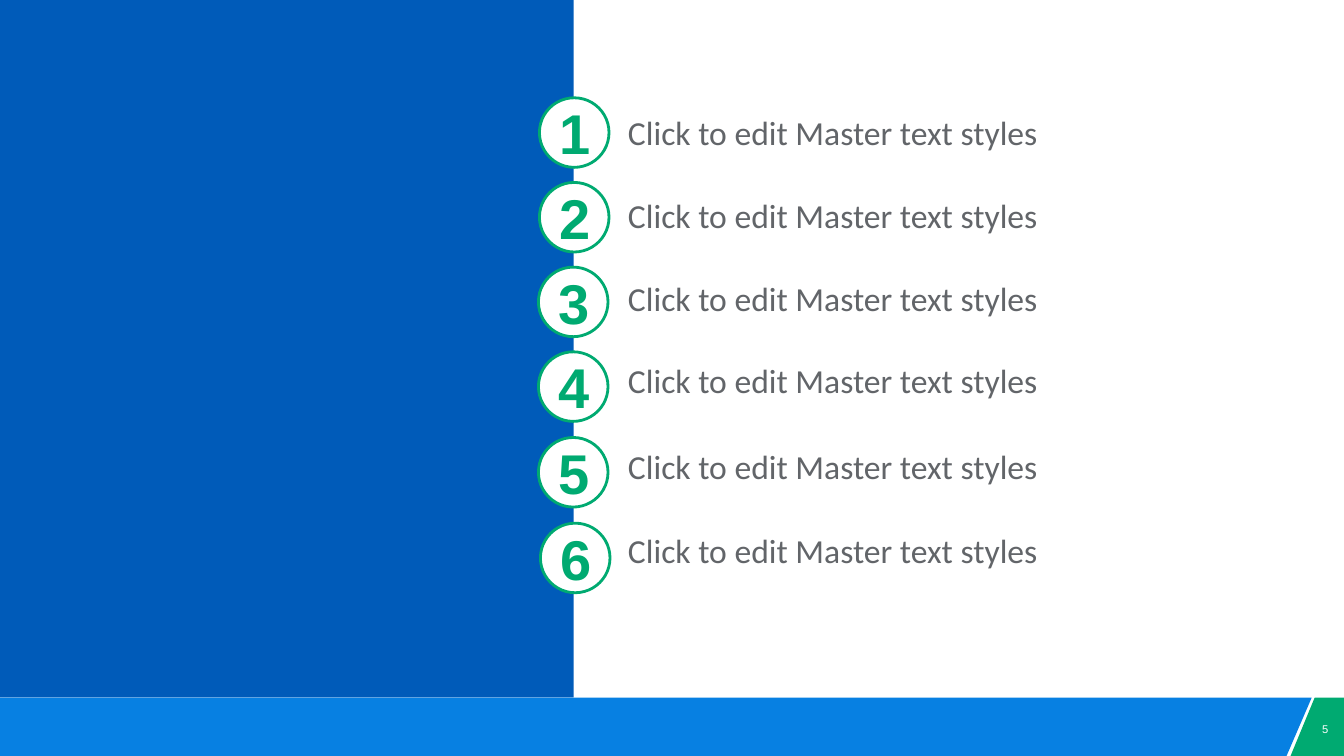
"""Build an agenda slide with six numbered lines beside a blue panel."""
from dataclasses import dataclass

from pptx import Presentation
from pptx.dml.color import RGBColor as Rgb
from pptx.enum.shapes import MSO_SHAPE as Kind
from pptx.enum.text import MSO_ANCHOR as Anchor, MSO_AUTO_SIZE as Fit, PP_ALIGN as Align
from pptx.shapes.base import BaseShape as Shape
from pptx.util import Inches, Pt

WIDE, HIGH, FOOT = 13.33, 7.5, 6.92
DISC = 0.69
WHITE, GREEN, GREY = "FFFFFF", "00AA71", "626569"
LINE = "Click to edit Master text styles"

Box = tuple[float, float, float, float]


@dataclass
class Item:
    left: float
    top: float
    tall: float
    text: float


@dataclass
class Style:
    font: dict
    hue: str
    frame: dict
    para: dict


ITEMS = [
    Item(5.35, 0.97, 0.52, 1.11),
    Item(5.35, 1.81, 0.52, 1.93),
    Item(5.34, 2.65, 0.52, 2.75),
    Item(5.34, 3.49, 0.52, 3.57),
    Item(5.34, 4.34, 0.67, 4.42),
    Item(5.36, 5.19, 0.67, 5.25),
]
TIGHT = {"margin_left": 0, "margin_right": 0, "margin_top": 0, "margin_bottom": 0,
         "vertical_anchor": Anchor.MIDDLE, "word_wrap": True}
MID = {"alignment": Align.CENTER}
PAGE = Style({"name": "Arial", "size": Pt(8)}, WHITE, TIGHT, MID)
DIGIT = Style({"name": "Arial", "size": Pt(40), "bold": True}, GREEN,
              {**TIGHT, "auto_size": Fit.SHAPE_TO_FIT_TEXT}, MID)
BODY = Style({"name": "Calibri", "size": Pt(24)}, GREY,
             {"word_wrap": True}, {"line_spacing": 0.9})


def paint(shape: Shape, fill: str, line: str = "") -> None:
    shape.shadow.inherit = False
    shape.fill.solid()
    shape.fill.fore_color.rgb = Rgb.from_string(fill)
    if line:
        shape.line.color.rgb = Rgb.from_string(line)
        shape.line.width = Pt(2)
    else:
        shape.line.fill.background()


def put(shapes, kind: Kind, box: Box, fill: str, line: str = "") -> None:
    paint(shapes.add_shape(kind, *map(Inches, box)), fill, line)


def trace(shapes, spots: list[tuple[float, float]], fill: str) -> None:
    first, *rest = [(Inches(x), Inches(y)) for x, y in spots]
    pen = shapes.build_freeform(*first)
    pen.add_line_segments(rest, close=True)
    paint(pen.convert_to_shape(), fill)


def write(shapes, box: Box, text: str, style: Style) -> None:
    frame = shapes.add_textbox(*map(Inches, box)).text_frame
    para = frame.paragraphs[0]
    run = para.add_run()
    run.text = text
    for part, look in ((frame, style.frame), (para, style.para), (run.font, style.font)):
        for name, value in look.items():
            setattr(part, name, value)
    run.font.color.rgb = Rgb.from_string(style.hue)


def mark(shapes, item: Item, num: int) -> None:
    group = shapes.add_group_shape().shapes
    put(group, Kind.OVAL, (item.left, item.top, DISC, DISC), WHITE, GREEN)
    top = item.top + (DISC - item.tall) / 2
    write(group, (item.left + 0.1, top, 0.5, item.tall), str(num), DIGIT)


def main() -> None:
    deck = Presentation()
    deck.slide_width, deck.slide_height = Inches(WIDE), Inches(HIGH)
    shapes = deck.slides.add_slide(deck.slide_layouts[6]).shapes
    put(shapes, Kind.RECTANGLE, (0, 0, 5.69, FOOT), "005BB9")
    put(shapes, Kind.RECTANGLE, (0, FOOT, WIDE, HIGH - FOOT), WHITE)
    trace(shapes, [(0, FOOT), (13.01, FOOT), (12.76, HIGH), (0, HIGH)], "0780E2")
    trace(shapes, [(13.04, FOOT), (WIDE, FOOT), (WIDE, HIGH), (12.8, HIGH)], GREEN)
    write(shapes, (12.97, 7.03, 0.35, 0.4), "5", PAGE)
    for num, item in enumerate(ITEMS, 1):
        mark(shapes, item, num)
        write(shapes, (6.13, item.text, 6.33, 0.61), LINE, BODY)
    deck.save("out.pptx")


if __name__ == "__main__":
    main()
